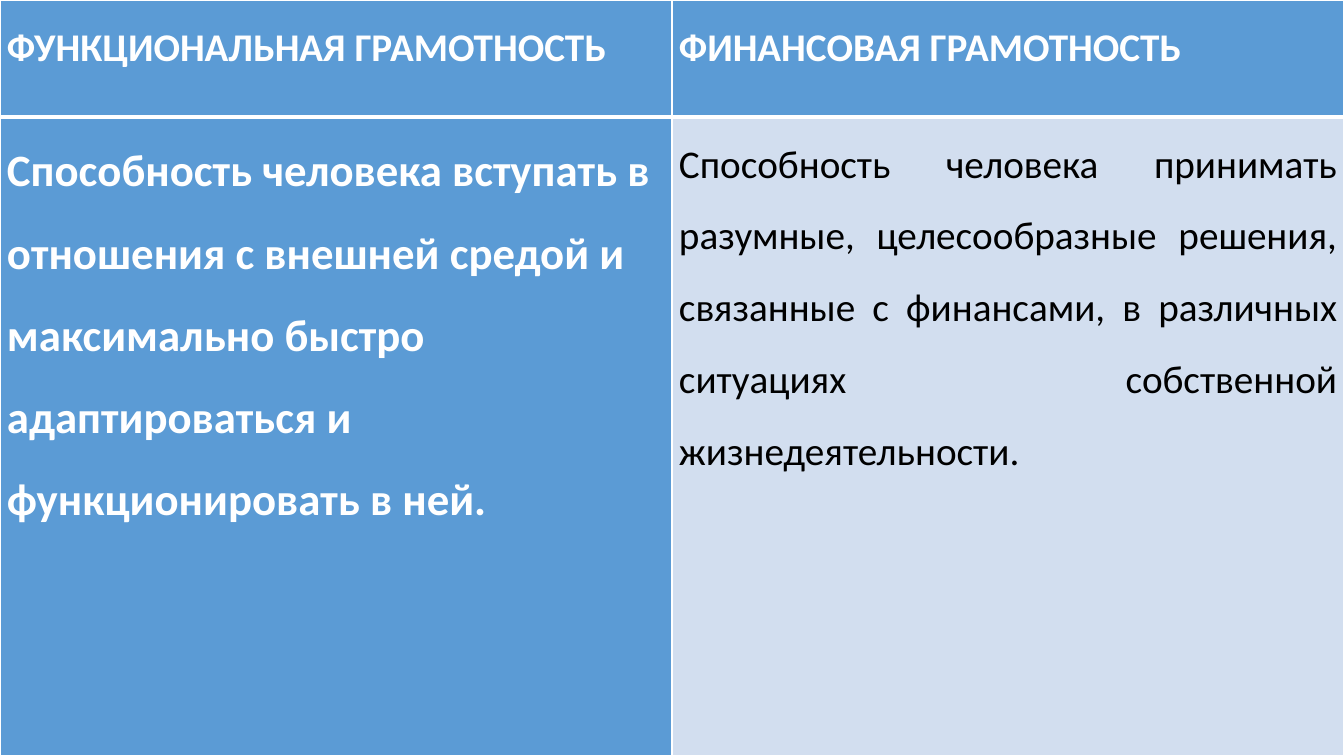
from pptx import Presentation
from pptx.dml.color import RGBColor
from pptx.enum.text import PP_ALIGN as Align
from pptx.oxml.ns import qn
from pptx.util import Pt
from lxml.etree import SubElement as Sub

WIDE, HIGH = 960, 540
HEAD = 83.5
WHITE, BLACK, BLUE, PALE = "FFFFFF", "000000", "5B9BD5", "D2DEEF"

ROWS = [
    [
        ("ФУНКЦИОНАЛЬНАЯ ГРАМОТНОСТЬ", BLUE, {}),
        ("ФИНАНСОВАЯ ГРАМОТНОСТЬ", BLUE, {}),
    ],
    [
        ("Способность человека вступать в отношения с внешней средой "
         "и максимально быстро адаптироваться и функционировать в ней.",
         BLUE, {"size": 32, "align": Align.LEFT}),
        ("Способность человека принимать разумные, целесообразные решения, "
         "связанные с финансами, в различных ситуациях собственной "
         "жизнедеятельности.",
         PALE, {"color": BLACK, "bold": False}),
    ],
]


def paint(fill, color):
    fill.solid()
    fill.fore_color.rgb = RGBColor.from_string(color)


def write(frame, text, size=28, color=WHITE, bold=True, align=Align.JUSTIFY):
    para = frame.paragraphs[0]
    para.alignment = align
    para.line_spacing = 1.5
    run = para.add_run()
    run.text = text
    font = run.font
    font.name, font.size, font.bold = "Calibri", Pt(size), bold
    paint(font.fill, color)


def edge(cell, **widths):
    props = cell._tc.get_or_add_tcPr()
    for side in "LRTB":
        line = Sub(props, qn(f"a:ln{side}"), w=str(Pt(widths.get(side, 1))))
        Sub(Sub(line, qn("a:solidFill")), qn("a:srgbClr"), val=WHITE)


def compare(slide, left, top, width, height):
    frame = slide.shapes.add_table(
        len(ROWS), 2, Pt(left), Pt(top), Pt(width), Pt(height))
    table = frame.table
    for col in table.columns:
        col.width = Pt(width / 2)
    for row, size in zip(table.rows, (HEAD, height - HEAD)):
        row.height = Pt(size)
    for y, row in enumerate(ROWS):
        for x, (text, color, style) in enumerate(row):
            cell = table.cell(y, x)
            cell.margin_left = cell.margin_right = Pt(5)
            cell.margin_top = cell.margin_bottom = 0
            edge(cell, **({"T": 3} if y else {"B": 3}))
            paint(cell.fill, color)
            write(cell.text_frame, text, **style)


def main():
    deck = Presentation()
    deck.slide_width, deck.slide_height = Pt(WIDE), Pt(HIGH)
    slide = deck.slides.add_slide(deck.slide_layouts[6])
    compare(slide, 0, 0, WIDE, HIGH)
    deck.save("out.pptx")


if __name__ == "__main__":
    main()
